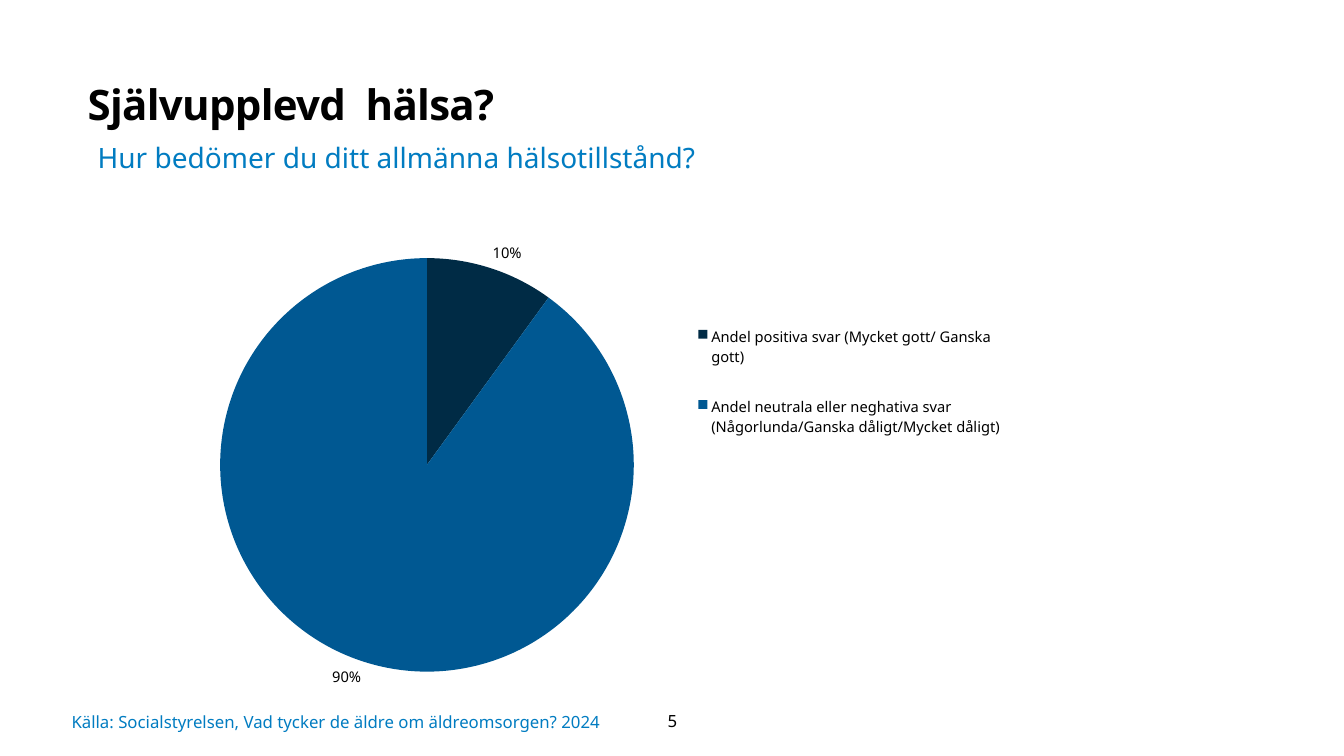
"""Builds the slide on self-rated health with a pie chart of the answers."""
from dataclasses import dataclass

from lxml import etree
from pptx import Presentation
from pptx import util as u
from pptx.chart import data
from pptx.dml.color import RGBColor
from pptx.enum import chart as charts
from pptx.enum import text

FONT = "Noto Sans"
BLACK = RGBColor(0x00, 0x00, 0x00)
BLUE = RGBColor(0x01, 0x7C, 0xC1)
NAVY = RGBColor(0x00, 0x2B, 0x45)
OCEAN = RGBColor(0x00, 0x58, 0x92)
CHART_NS = "http://schemas.openxmlformats.org/drawingml/2006/chart"


@dataclass(frozen=True)
class Box:
    left: float
    top: float
    width: float
    height: float

    def lengths(self) -> tuple:
        return tuple(u.Inches(n) for n in (self.left, self.top, self.width, self.height))


@dataclass(frozen=True)
class Answer:
    label: str
    percent: int
    color: RGBColor


@dataclass(frozen=True)
class Label:
    box: Box
    wording: str
    size: float
    color: RGBColor
    anchor: text.MSO_ANCHOR = text.MSO_ANCHOR.MIDDLE
    align: text.PP_ALIGN = text.PP_ALIGN.LEFT
    margins: tuple = (0.1, 0.05, 0.1, 0.05)
    grow: bool = False


ANSWERS = (
    Answer("Andel positiva svar (Mycket gott/ Ganska gott)", 10, NAVY),
    Answer("Andel neutrala eller neghativa svar (Någorlunda/Ganska dåligt/Mycket dåligt)", 90, OCEAN),
)
LABELS = (
    Label(Box(0.87, 1.34, 7.88, 0.44), "Hur bedömer du ditt allmänna hälsotillstånd?",
          20, BLUE, anchor=text.MSO_ANCHOR.TOP, grow=True),
    Label(Box(0.71, 6.95, 5.45, 0.42),
          "Källa: Socialstyrelsen, Vad tycker de äldre om äldreomsorgen? 2024",
          12, BLUE, margins=(0, 0, 0, 0)),
    Label(Box(6.16, 6.95, 1.02, 0.4), "5", 12, BLACK, align=text.PP_ALIGN.CENTER),
)


def style_font(font, size: float, color: RGBColor, bold: bool = False) -> None:
    font.name = FONT
    font.size = u.Pt(size)
    font.bold = bold
    font.color.rgb = color


def write_text(shape, wording: str, *, size: float, color: RGBColor, bold: bool = False,
               anchor=text.MSO_ANCHOR.TOP, align=text.PP_ALIGN.LEFT,
               margins: tuple = (0.1, 0.05, 0.1, 0.05), grow: bool = False):
    frame = shape.text_frame
    frame.word_wrap = True
    frame.auto_size = text.MSO_AUTO_SIZE.SHAPE_TO_FIT_TEXT if grow else text.MSO_AUTO_SIZE.NONE
    frame.vertical_anchor = anchor
    (frame.margin_left, frame.margin_top,
     frame.margin_right, frame.margin_bottom) = (u.Inches(n) for n in margins)
    paragraph = frame.paragraphs[0]
    paragraph.alignment = align
    run = paragraph.add_run()
    run.text = wording
    style_font(run.font, size, color, bold)
    return paragraph


def add_title(slide) -> None:
    title = slide.shapes.title
    title.left, title.top, title.width, title.height = Box(0.87, 0.73, 9.83, 0.61).lengths()
    paragraph = write_text(title, "Självupplevd  hälsa?", size=30, color=BLACK, bold=True,
                           margins=(0, 0, 0.1, 0.05))
    paragraph.line_spacing = 1.1
    paragraph.runs[0].font._element.set("spc", "-50")


def add_label(slide, label: Label) -> None:
    write_text(slide.shapes.add_textbox(*label.box.lengths()), label.wording,
               size=label.size, color=label.color, anchor=label.anchor,
               align=label.align, margins=label.margins, grow=label.grow)


def set_layout(element, box: Box, index: int, inner: bool = False) -> None:
    for old in element.findall(f"{{{CHART_NS}}}layout"):
        element.remove(old)
    layout = etree.Element(f"{{{CHART_NS}}}layout")
    manual = etree.SubElement(layout, f"{{{CHART_NS}}}manualLayout")
    settings = [("layoutTarget", "inner")] if inner else []
    settings += [("xMode", "edge"), ("yMode", "edge"), ("x", box.left), ("y", box.top),
                 ("w", box.width), ("h", box.height)]
    for name, value in settings:
        etree.SubElement(manual, f"{{{CHART_NS}}}{name}").set("val", str(value))
    element.insert(index, layout)


def add_health_chart(slide) -> None:
    chart_data = data.CategoryChartData()
    chart_data.categories = [answer.label for answer in ANSWERS]
    chart_data.add_series("Series 1", [answer.percent for answer in ANSWERS])
    chart = slide.shapes.add_chart(charts.XL_CHART_TYPE.PIE,
                                   *Box(1.66, 2.12, 8.73, 4.84).lengths(), chart_data).chart
    chart.has_title = False
    style_font(chart.font, 10, BLACK)

    plot = chart.plots[0]
    plot.vary_by_categories = True
    series = plot.series[0]
    for index, answer in enumerate(ANSWERS):
        point = series.points[index].format
        point.fill.solid()
        point.fill.fore_color.rgb = answer.color
        point.line.fill.background()

    labels = series.data_labels
    labels.show_percentage = True
    labels.show_value = False
    labels.number_format = "0%"
    labels.number_format_is_linked = False
    labels.position = charts.XL_LABEL_POSITION.OUTSIDE_END
    style_font(labels.font, 10.5, BLACK)

    chart.has_legend = True
    legend = chart.legend
    legend.position = charts.XL_LEGEND_POSITION.RIGHT
    legend.include_in_layout = False
    style_font(legend.font, 10.5, BLACK)
    set_layout(legend._element, Box(0.59, 0.17, 0.37, 0.35), 1)
    plot_area = chart._chartSpace.find(f".//{{{CHART_NS}}}plotArea")
    set_layout(plot_area, Box(0.06, 0.09, 0.47, 0.85), 0, inner=True)


def main() -> None:
    presentation = Presentation()
    presentation.slide_width = u.Inches(13.33)
    presentation.slide_height = u.Inches(7.5)
    slide = presentation.slides.add_slide(presentation.slide_layouts[5])
    add_title(slide)
    add_health_chart(slide)
    for label in LABELS:
        add_label(slide, label)
    presentation.save("out.pptx")


if __name__ == "__main__":
    main()
